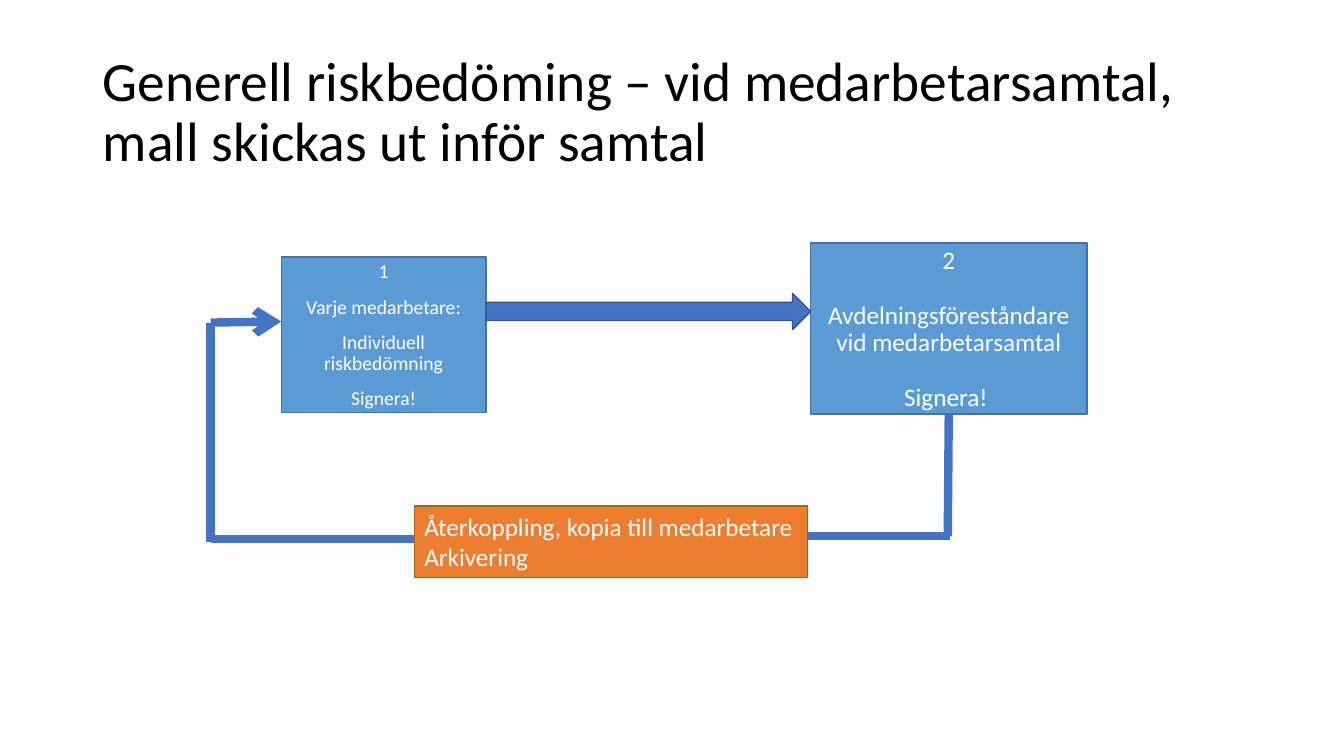
from lxml import etree
from pptx import Presentation
from pptx.dml.color import RGBColor
from pptx.enum.shapes import MSO_CONNECTOR, MSO_SHAPE
from pptx.enum.text import MSO_ANCHOR, MSO_AUTO_SIZE, PP_ALIGN
from pptx.oxml.ns import qn
from pptx.util import Inches, Pt

RECT, ARROW = MSO_SHAPE.RECTANGLE, MSO_SHAPE.RIGHT_ARROW
LINE, BENT = MSO_CONNECTOR.STRAIGHT, MSO_CONNECTOR.ELBOW
TOP, MIDDLE = MSO_ANCHOR.TOP, MSO_ANCHOR.MIDDLE
LEFT, CENTER = PP_ALIGN.LEFT, PP_ALIGN.CENTER
FONT = "Calibri"

TITLE = "Generell riskbedöming – vid medarbetarsamtal, mall skickas ut inför samtal"
STAFF = ["1", "Varje medarbetare:", "Individuell riskbedömning", "Signera!"]
CHIEF = ["2", "Avdelningsföreståndare vid medarbetarsamtal", "Signera! "]
REPLY = ["Återkoppling, kopia till medarbetare", "Arkivering"]

STAFF_BOX = (2.79, 2.55, 2.03, 1.54)
CHIEF_BOX = (8.04, 2.41, 2.74, 1.7)
REPLY_BOX = (4.11, 5.02, 3.9, 0.71)
BLUE, EDGE = "4472C4", "43739E"


def color(code):
    return RGBColor.from_string(code)


def write(frame, lines, size, ink, align, anchor, space=1.0, gap=0, wrap=True):
    frame.word_wrap = wrap
    frame.auto_size = MSO_AUTO_SIZE.NONE
    frame.vertical_anchor = anchor
    frame.text = "\n".join(lines)
    for i, para in enumerate(frame.paragraphs):
        para.alignment = align
        para.line_spacing = space
        para.space_before = Pt(gap if i else 0)
        para.font.name = FONT
        para.font.size = Pt(size)
        para.font.color.rgb = color(ink)


def block(kind, box, fill, edge):
    shape = slide.shapes.add_shape(kind, *map(Inches, box))
    shape.shadow.inherit = False
    shape.fill.solid()
    shape.fill.fore_color.rgb = color(fill)
    shape.line.color.rgb = color(edge)
    shape.line.width = Pt(1)
    return shape


def link(start, end, kind=LINE, head=False):
    line = slide.shapes.add_connector(kind, *map(Inches, start + end))
    line.line.color.rgb = color(BLUE)
    line.line.width = Pt(6)
    if head:
        tail = etree.SubElement(line.line._get_or_add_ln(), qn("a:tailEnd"))
        tail.set("type", "arrow")
    etree.SubElement(line._element.spPr, qn("a:effectLst"))


deck = Presentation()
deck.slide_width, deck.slide_height = Inches(13.33), Inches(7.5)
slide = deck.slides.add_slide(deck.slide_layouts[5])

title = slide.shapes.title
title.left, title.top, title.width, title.height = map(Inches, (0.92, 0.4, 11.5, 1.45))
write(title.text_frame, [TITLE], 39.6, "000000", LEFT, MIDDLE, 0.9)

chief = block(RECT, CHIEF_BOX, "5B9BD5", EDGE)
write(chief.text_frame, CHIEF, 18, "FFFFFF", CENTER, TOP, 0.9, 19.7)
staff = block(RECT, STAFF_BOX, "5B9BD5", EDGE)
write(staff.text_frame, STAFF, 14, "FFFFFF", CENTER, TOP, 0.9, 10)

x, y, w, h = STAFF_BOX
out = x + w
block(ARROW, (out, 2.91, CHIEF_BOX[0] - out, 0.36), BLUE, "325491")

enter = (x, 3.19)
turn = (2.09, 3.2)
leave = (CHIEF_BOX[0] + CHIEF_BOX[2] / 2, CHIEF_BOX[1] + CHIEF_BOX[3])
link((9.42, 5.32), (turn[0], 5.35), BENT)
link((turn[0], 5.38), turn)
link(turn, enter, head=True)

reply = block(RECT, REPLY_BOX, "ED7D31", "AF5C24")
write(reply.text_frame, REPLY, 18, "FFFFFF", LEFT, TOP, wrap=False)
link((9.4, 5.32), leave)

deck.save("out.pptx")
